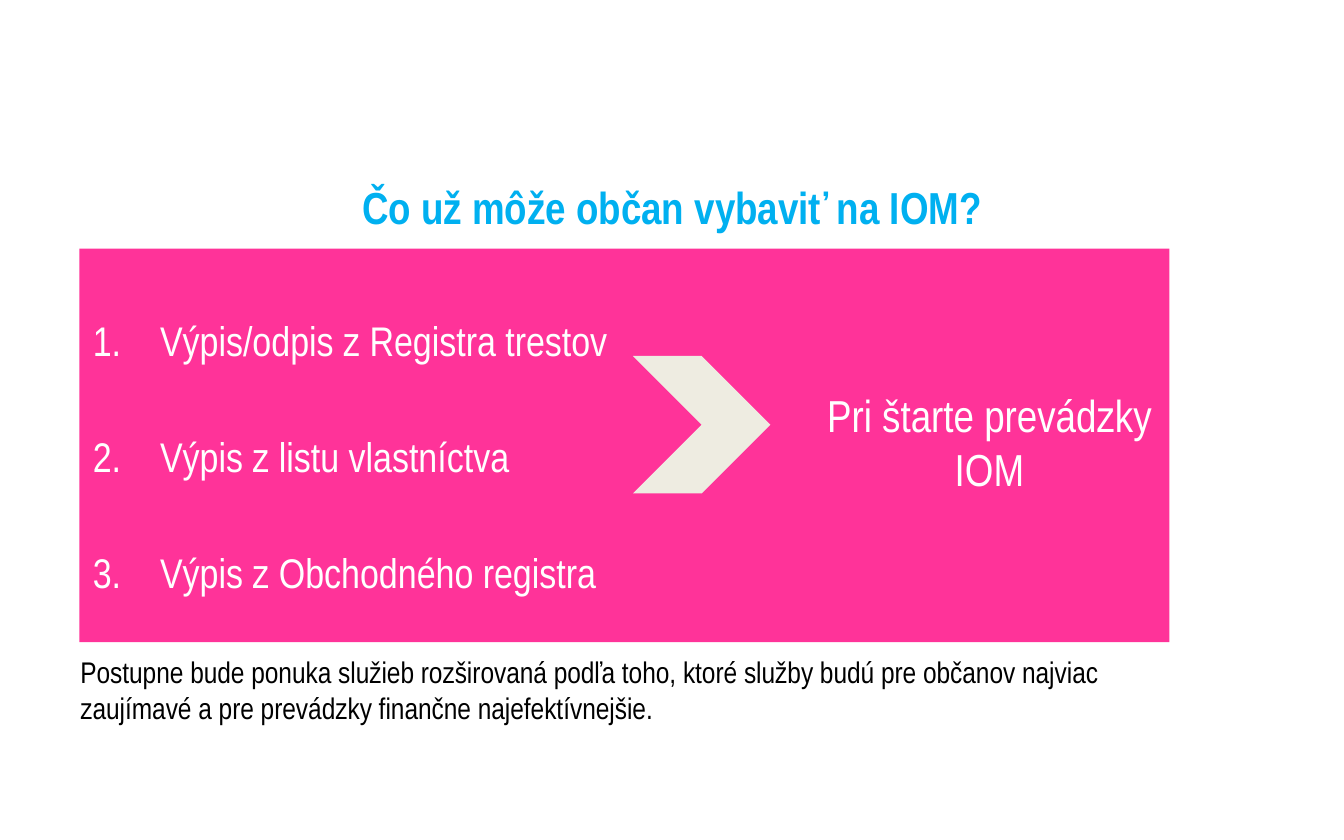
from lxml import etree
from pptx import Presentation
from pptx.dml.color import RGBColor
from pptx.enum.shapes import MSO_SHAPE
from pptx.enum.text import MSO_ANCHOR, MSO_AUTO_SIZE, PP_ALIGN
from pptx.oxml.ns import qn
from pptx.util import Cm, Pt

CHEVRON = MSO_SHAPE.CHEVRON
TOP, MIDDLE = MSO_ANCHOR.TOP, MSO_ANCHOR.MIDDLE
NO_FIT = MSO_AUTO_SIZE.NONE
LEFT, CENTER = PP_ALIGN.LEFT, PP_ALIGN.CENTER

COLORS = {
    "title": "00B0F0",
    "panel": "FF3399",
    "arrow": "EEECE1",
    "light": "FFFFFF",
    "dark": "000000",
}


class Deck:
    font = "Arial Narrow"

    def __init__(self, wide, high):
        self.prs = Presentation()
        self.prs.slide_width, self.prs.slide_height = Cm(wide), Cm(high)
        self.slide = self.prs.slides.add_slide(self.prs.slide_layouts[1])

    def color(self, name):
        return RGBColor.from_string(COLORS[name])

    def place(self, shape, box):
        shape.left, shape.top, shape.width, shape.height = map(Cm, box)

    def paint(self, shape, name):
        shape.fill.solid()
        shape.fill.fore_color.rgb = self.color(name)

    def style(self, frame, size, name, align=LEFT, anchor=TOP, bold=False):
        frame.word_wrap = True
        frame.auto_size = NO_FIT
        frame.vertical_anchor = anchor
        for par in frame.paragraphs:
            par.alignment = align
            for run in par.runs:
                run.font.name = self.font
                run.font.size = Pt(size)
                run.font.bold = bold
                run.font.color.rgb = self.color(name)

    def title(self, text, box):
        shape = self.slide.shapes.title
        self.place(shape, box)
        shape.text_frame.text = text
        self.style(shape.text_frame, 24, "title", CENTER, MIDDLE, True)

    def steps(self, items, box, inset, gap):
        """Fill the body placeholder with a numbered list on a panel."""
        shape = self.slide.placeholders[1]
        self.place(shape, box)
        self.paint(shape, "panel")
        frame = shape.text_frame
        frame.margin_top = Cm(inset)
        frame.text = "\n".join(items)
        for i, par in enumerate(frame.paragraphs):
            props = par._p.get_or_add_pPr()
            props.set("marL", str(Cm(1.27)))
            props.set("indent", str(-Cm(1.27)))
            etree.SubElement(props, qn("a:buFont"), typeface="+mj-lt")
            etree.SubElement(props, qn("a:buAutoNum"), type="arabicPeriod")
            par.space_before = Pt(gap if i else 0)
        self.style(frame, 22.2, "light")

    def arrow(self, box):
        shape = self.slide.shapes.add_shape(CHEVRON, *map(Cm, box))
        shape.shadow.inherit = False
        self.paint(shape, "arrow")
        shape.line.fill.background()

    def text(self, text, box, size, name, align=LEFT, anchor=TOP):
        frame = self.slide.shapes.add_textbox(*map(Cm, box)).text_frame
        frame.text = text
        self.style(frame, size, name, align, anchor)


def main():
    deck = Deck(25.4, 15.88)
    deck.title("Čo už môže občan vybaviť na IOM?", (1.27, 2.87, 22.86, 2.08))
    deck.steps(
        [
            "Výpis/odpis z Registra trestov",
            "Výpis z listu vlastníctva",
            "Výpis z Obchodného registra",
        ],
        (1.5, 4.7, 20.6, 7.44), inset=1.26, gap=35.5,
    )
    deck.arrow((11.96, 6.73, 2.6, 2.6))
    deck.text("Pri štarte prevádzky IOM", (15.3, 6.35, 6.8, 4),
              24, "light", CENTER, MIDDLE)
    deck.text(
        "Postupne bude ponuka služieb rozširovaná podľa toho, ktoré služby "
        "budú pre občanov najviac zaujímavé a pre prevádzky finančne "
        "najefektívnejšie.",
        (1.27, 12.24, 20.4, 1.63), 16, "dark",
    )
    deck.prs.save("out.pptx")


if __name__ == "__main__":
    main()
